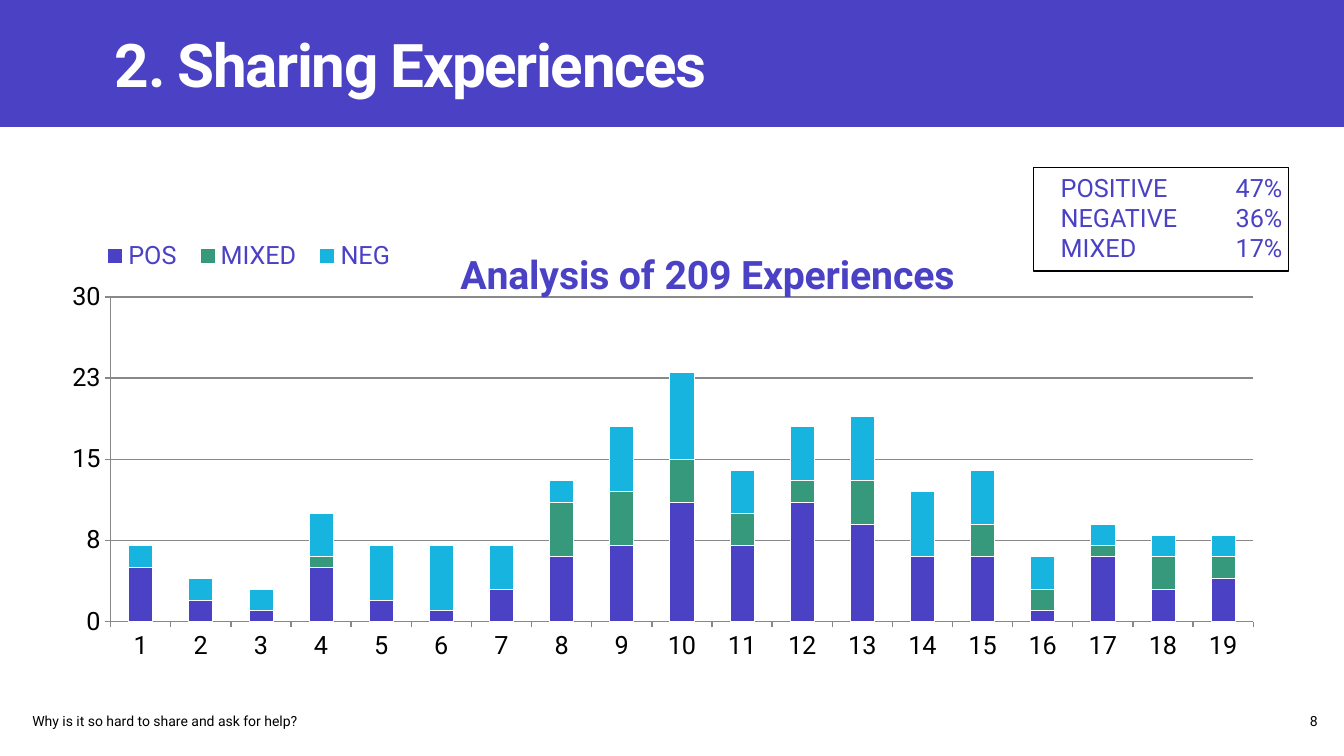
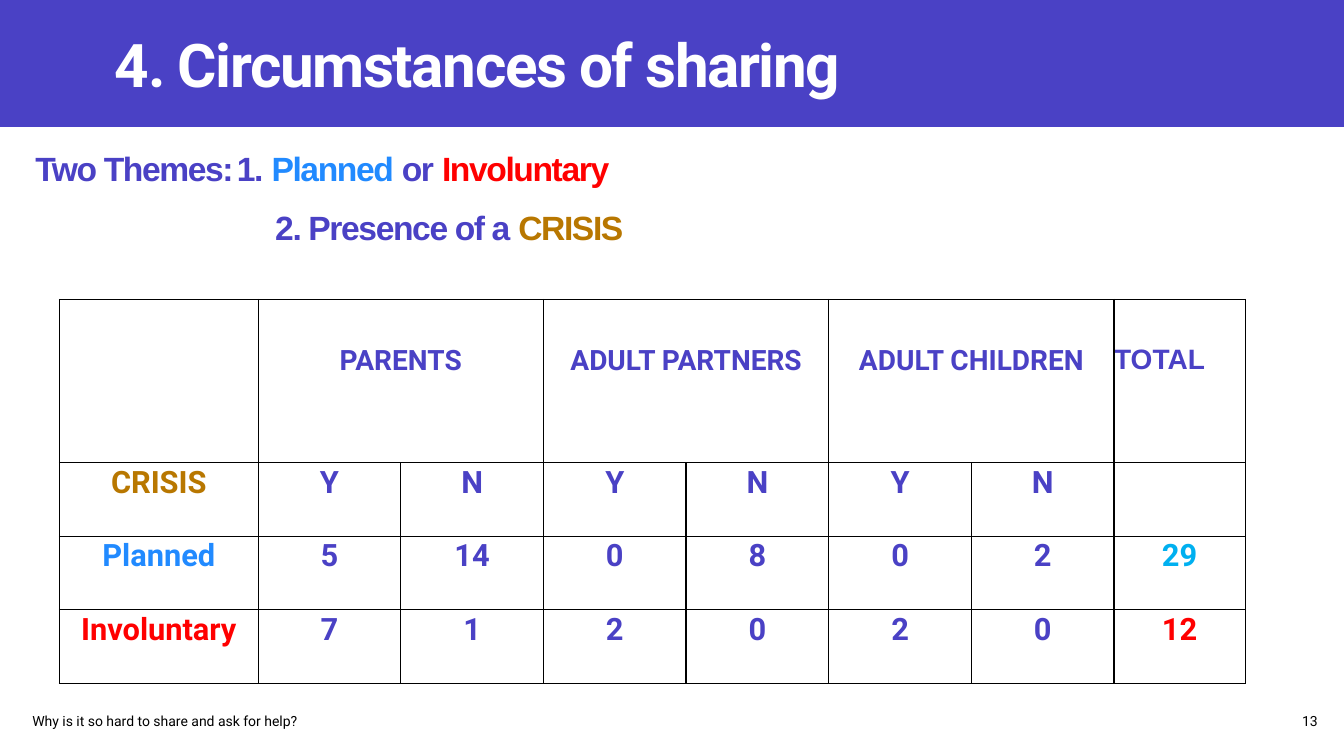
from lxml import etree
from pptx import Presentation
from pptx import util as u
from pptx.chart import data as chart_data
from pptx.dml import color as dml
from pptx.enum import chart as ch, text as tx
from pptx.oxml import ns

Inches, Pt = u.Inches, u.Pt
INDIGO, BLUE, RED, AMBER = "4A41C5", "218AFF", "FF0000", "B87700"
GREEN, CYAN, SKY, GREY = "37997B", "17B4DF", "00B0F0", "888888"
BLACK, WHITE = "000000", "FFFFFF"
INSET = Inches(0.05)
SIDES = ("margin_left", "margin_right", "margin_top", "margin_bottom")


def rgb(value):
    return dml.RGBColor.from_string(value)


def add_run(paragraph, words, size, color, bold=False, font="Roboto", spacing=0):
    run = paragraph.add_run()
    run.text = words
    run.font.name, run.font.size, run.font.bold = font, Pt(size), bold
    run.font.color.rgb = rgb(color)
    if spacing:
        run._r.get_or_add_rPr().set("spc", str(spacing * 100))


prs = Presentation()
prs.slide_width, prs.slide_height = Inches(13.33), Inches(7.5)
experiences = prs.slides.add_slide(prs.slide_layouts[5])
circumstances = prs.slides.add_slide(prs.slide_layouts[1])

# Title band, kept on the master behind everything else
band = experiences.shapes.add_shape(1, 0, 0, prs.slide_width, Inches(1.26))
band.shadow.inherit = False
band.fill.solid()
band.fill.fore_color.rgb = rgb(INDIGO)
band.line.fill.background()
prs.slide_master.shapes._spTree.insert(2, band._element)

# Titles, footers and page numbers
for slide, heading, number in (
    (experiences, "2. Sharing Experiences", "8"),
    (circumstances, "4. Circumstances of sharing", "13"),
):
    title = slide.shapes.title
    title.left, title.top = Inches(1.09), Inches(0.21)
    title.width, title.height = Inches(10.96), Inches(0.83)
    number_width = 0.11 + 0.08 * len(number)
    footer = slide.shapes.add_textbox(
        Inches(0.27), Inches(7.02), Inches(5.19), Inches(0.27))
    page = slide.shapes.add_textbox(
        Inches(13.12 - number_width), Inches(7.02), Inches(number_width), Inches(0.27))
    for box, words, size, color, align in (
        (title, heading, 43, WHITE, tx.PP_ALIGN.LEFT),
        (footer, "Why is it so hard to share and ask for help?", 10, BLACK,
         tx.PP_ALIGN.LEFT),
        (page, number, 10, BLACK, tx.PP_ALIGN.RIGHT),
    ):
        frame = box.text_frame
        frame.word_wrap = box is not page
        frame.auto_size = tx.MSO_AUTO_SIZE.NONE
        frame.vertical_anchor = tx.MSO_ANCHOR.MIDDLE
        for side in SIDES:
            setattr(frame, side, INSET)
        line = frame.paragraphs[0]
        line.alignment = align
        add_run(line, words, size, color, bold=box is title,
                spacing=-1 if box is title else 0)

# Stacked columns: kinds of experience
counts = chart_data.CategoryChartData()
counts.categories = [str(n) for n in range(1, 20)]
counts.add_series("POS", (5, 2, 1, 5, 2, 1, 3, 6, 7, 11, 7, 11, 9, 6, 6, 1, 6, 3, 4))
counts.add_series("MIXED", (0, 0, 0, 1, 0, 0, 0, 5, 5, 4, 3, 2, 4, 0, 3, 2, 1, 3, 2))
counts.add_series("NEG", (2, 2, 2, 4, 5, 6, 4, 2, 6, 8, 4, 5, 6, 6, 5, 3, 2, 2, 2))
chart = experiences.shapes.add_chart(
    ch.XL_CHART_TYPE.COLUMN_STACKED, Inches(0.56), Inches(2.18),
    Inches(11.93), Inches(4.48), counts).chart
chart.font.name, chart.font.size = "Roboto", Pt(10)
chart.font.color.rgb = rgb(BLACK)

plot = chart.plots[0]
plot.gap_width, plot.overlap, plot.vary_by_categories = 150, 100, False
for series, color in zip(plot.series, (INDIGO, GREEN, CYAN)):
    series.format.fill.solid()
    series.format.fill.fore_color.rgb = rgb(color)
    series.format.line.color.rgb = rgb(WHITE)
    series.format.line.width = Pt(0.5)

scale = chart.value_axis
scale.minimum_scale, scale.maximum_scale, scale.major_unit = 0, 30, 7.5
scale.tick_labels.number_format = "0"
scale.tick_labels.number_format_is_linked = False
scale.has_major_gridlines = True
scale.major_gridlines.format.line.color.rgb = rgb(GREY)
scale.major_gridlines.format.line.width = Pt(1)
chart.category_axis.tick_label_position = ch.XL_TICK_LABEL_POSITION.LOW
for axis in (scale, chart.category_axis):
    axis.major_tick_mark = ch.XL_TICK_MARK.OUTSIDE
    axis.minor_tick_mark = ch.XL_TICK_MARK.NONE
    axis.format.line.color.rgb = rgb(GREY)
    axis.format.line.width = Pt(1)
    axis.tick_labels.font.name = "Roboto"
    axis.tick_labels.font.size = Pt(18)
    axis.tick_labels.font.color.rgb = rgb(BLACK)

chart.has_title = chart.has_legend = True
add_run(chart.chart_title.text_frame.paragraphs[0],
        "Analysis of 209 Experiences", 28, INDIGO, bold=True)
chart_title = chart.chart_title._element
for overlay in chart_title.findall(ns.qn("c:overlay")):
    overlay.set("val", "1")
legend = chart.legend
legend.position = ch.XL_LEGEND_POSITION.TOP
legend.include_in_layout = True
legend.font.name, legend.font.size = "Roboto", Pt(18)
legend.font.color.rgb = rgb(INDIGO)

# Manual places inside the chart, as shares of its size
plot_area = chart._chartSpace.chart.plotArea
for part, index, place in (
    (plot_area, 0, {"x": 0.045, "y": 0.171, "w": 0.95, "h": 0.719}),
    (chart_title, 1, {"x": 0.33, "y": 0.05}),
    (legend._element, 1, {"x": 0.03, "y": 0.04, "w": 0.26, "h": 0.08}),
):
    for old in part.findall(ns.qn("c:layout")):
        part.remove(old)
    layout = etree.Element(ns.qn("c:layout"))
    manual = etree.SubElement(layout, ns.qn("c:manualLayout"))
    if part is plot_area:
        etree.SubElement(manual, ns.qn("c:layoutTarget")).set("val", "inner")
    for key in ("x", "y"):
        etree.SubElement(manual, ns.qn(f"c:{key}Mode")).set("val", "edge")
    for key, share in place.items():
        etree.SubElement(manual, ns.qn(f"c:{key}")).set("val", str(share))
    part.insert(index, layout)

# Summary box with right-aligned shares
summary = experiences.shapes.add_textbox(
    Inches(10.25), Inches(1.66), Inches(2.53), Inches(1.03))
summary.line.color.rgb = rgb(BLACK)
summary.line.width = Pt(1)
frame = summary.text_frame
frame.word_wrap = True
for side in SIDES:
    setattr(frame, side, INSET)
frame.margin_left = Inches(0.27)
for i, (kind, share) in enumerate(
        (("POSITIVE", "47%"), ("NEGATIVE", "36%"), ("MIXED", "17%"))):
    line = frame.add_paragraph() if i else frame.paragraphs[0]
    tabs = etree.SubElement(line._p.get_or_add_pPr(), ns.qn("a:tabLst"))
    etree.SubElement(tabs, ns.qn("a:tab"), pos=str(Inches(2.2)), algn="r")
    add_run(line, f"{kind}\t{share}", 18, INDIGO)

# The two themes
themes = circumstances.placeholders[1]
themes.left, themes.top = Inches(0.3), Inches(1.38)
themes.width, themes.height = Inches(11.92), Inches(4.75)
frame = themes.text_frame
frame.auto_size = tx.MSO_AUTO_SIZE.NONE
for side in SIDES:
    setattr(frame, side, INSET)
for i, (indent, runs) in enumerate((
    (0, (("Two Themes:\t1. ", INDIGO), ("Planned ", BLUE), ("or ", INDIGO),
         ("Involuntary", RED))),
    (2.38, (("2. Presence of a ", INDIGO), ("CRISIS", AMBER))),
)):
    line = frame.add_paragraph() if i else frame.paragraphs[0]
    props = line._p.get_or_add_pPr()
    props.set("marL", str(Inches(indent)))
    props.set("indent", "0")
    etree.SubElement(props, ns.qn("a:buNone"))
    tabs = etree.SubElement(props, ns.qn("a:tabLst"))
    etree.SubElement(tabs, ns.qn("a:tab"), pos=str(Inches(2.36)), algn="l")
    line.line_spacing = 1.1
    line.space_before = Pt(10 if i else 0)
    for words, color in runs:
        add_run(line, words, 24, color, bold=True, font="Arial", spacing=-1)

# Table of circumstances
rows = (
    ("", "PARENTS", "", "ADULT PARTNERS", "", "ADULT CHILDREN", "", "TOTAL"),
    ("CRISIS", "Y", "N", "Y", "N", "Y", "N", ""),
    ("Planned", "5", "14", "0", "8", "0", "2", "29"),
    ("Involuntary", "7", "1", "2", "0", "2", "0", "12"),
)
accents = {"CRISIS": AMBER, "Planned": BLUE, "Involuntary": RED, "29": SKY, "12": RED}
table = circumstances.shapes.add_table(
    4, 8, Inches(0.59), Inches(2.97), Inches(11.76), Inches(3.81)).table
table.first_row = table.horz_banding = False
answer_width = (11.76 - 1.97 - 1.3) / 6
for column, width in zip(table.columns, [1.97] + [answer_width] * 6 + [1.3]):
    column.width = Inches(width)
for row, height in zip(table.rows, (1.62, 0.73, 0.73, 0.73)):
    row.height = Inches(height)
for first in (1, 3, 5):
    table.cell(0, first).merge(table.cell(0, first + 1))
for r, row in enumerate(rows):
    for c, words in enumerate(row):
        cell = table.cell(r, c)
        for side in SIDES:
            setattr(cell, side, 0)
        if r == 0:
            cell.margin_top = Inches(0.43)
        props = cell._tc.get_or_add_tcPr()
        for edge in ("lnL", "lnR", "lnT", "lnB"):
            border = etree.SubElement(props, ns.qn(f"a:{edge}"), w=str(Pt(1)))
            paint = etree.SubElement(border, ns.qn("a:solidFill"))
            etree.SubElement(paint, ns.qn("a:srgbClr"), val=BLACK)
        cell.fill.solid()
        cell.fill.fore_color.rgb = rgb(WHITE)
        if words:
            line = cell.text_frame.paragraphs[0]
            is_total = words == "TOTAL"
            line.alignment = tx.PP_ALIGN.LEFT if is_total else tx.PP_ALIGN.CENTER
            line.line_spacing = 1.06
            add_run(line, words, 22 if r else 20, accents.get(words, INDIGO),
                    bold=True, font="Arial" if is_total else "Roboto")

prs.save("out.pptx")
